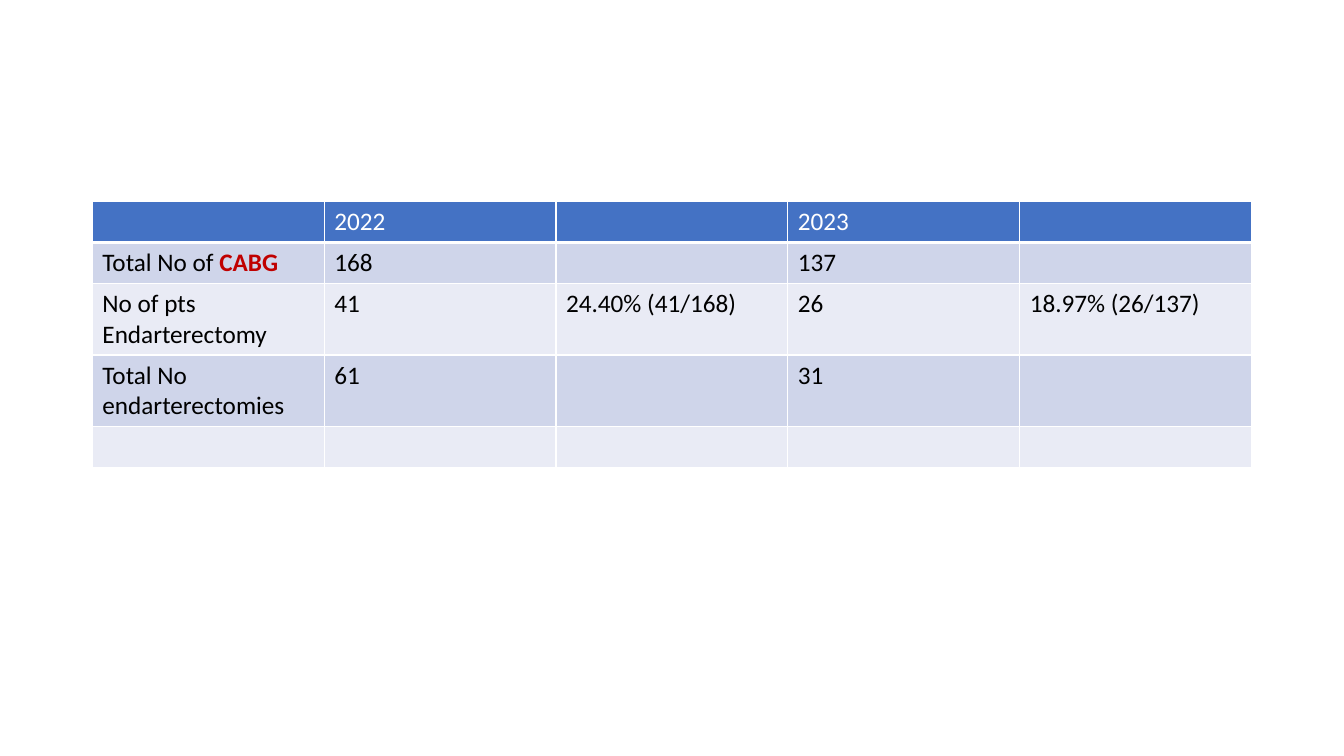
from lxml.etree import SubElement
from pptx import Presentation
from pptx.dml.color import RGBColor
from pptx.oxml.ns import qn
from pptx.util import Pt

WHITE = RGBColor(0xFF, 0xFF, 0xFF)
BLACK = RGBColor(0x00, 0x00, 0x00)
RED = RGBColor(0xC0, 0x00, 0x00)
BLUE = RGBColor(0x44, 0x72, 0xC4)
BAND_DARK = RGBColor(0xCF, 0xD5, 0xEA)
BAND_LIGHT = RGBColor(0xE9, 0xEB, 0xF5)

FONT = "Calibri"
HIGHLIGHT = "CABG"
ROW_HEIGHT = 29.2
ROWS = [
    ["", "2022", "", "2023", ""],
    ["Total No of CABG", "168", "", "137", ""],
    ["No of pts Endarterectomy", "41", "24.40% (41/168)", "26", "18.97% (26/137)"],
    ["Total No endarterectomies", "61", "", "31", ""],
    ["", "", "", "", ""],
]


def set_borders(cell, bottom):
    """Draw white borders round a cell, with the given bottom width in points."""
    tcPr = cell._tc.get_or_add_tcPr()
    for side, width in (("L", 1), ("R", 1), ("T", 1), ("B", bottom)):
        ln = SubElement(tcPr, qn(f"a:ln{side}"), w=str(Pt(width)))
        fill = SubElement(ln, qn("a:solidFill"))
        SubElement(fill, qn("a:srgbClr"), val=str(WHITE))


def write_cell(cell, text, color):
    """Write the cell text, with the highlighted word in bold red."""
    p = cell.text_frame.paragraphs[0]
    p.font.size = Pt(18)
    before, word, after = text.partition(HIGHLIGHT)
    for part in filter(None, (before, word, after)):
        r = p.add_run()
        r.text = part
        r.font.name = FONT
        r.font.size = Pt(18)
        r.font.bold = part == HIGHLIGHT
        r.font.color.rgb = RED if part == HIGHLIGHT else color


def add_results_table(s, left, top, width):
    """Place the yearly results table in the given box."""
    n_rows, n_cols = len(ROWS), len(ROWS[0])
    tbl = s.shapes.add_table(n_rows, n_cols, Pt(left), Pt(top),
                             Pt(width), Pt(n_rows * ROW_HEIGHT)).table
    for col in tbl.columns:
        col.width = Pt(width / n_cols)
    for i, texts in enumerate(ROWS):
        tbl.rows[i].height = Pt(ROW_HEIGHT)
        header = i == 0
        band = BAND_DARK if i % 2 else BAND_LIGHT
        for j, text in enumerate(texts):
            cell = tbl.cell(i, j)
            set_borders(cell, 3 if header else 1)
            cell.fill.solid()
            cell.fill.fore_color.rgb = BLUE if header else band
            write_cell(cell, text, WHITE if header else BLACK)


def main():
    """Build the slide and save it."""
    prs = Presentation()
    prs.slide_width, prs.slide_height = Pt(960), Pt(540)
    s = prs.slides.add_slide(prs.slide_layouts[6])
    add_results_table(s, 66, 144, 828)
    prs.save("out.pptx")


if __name__ == "__main__":
    main()
